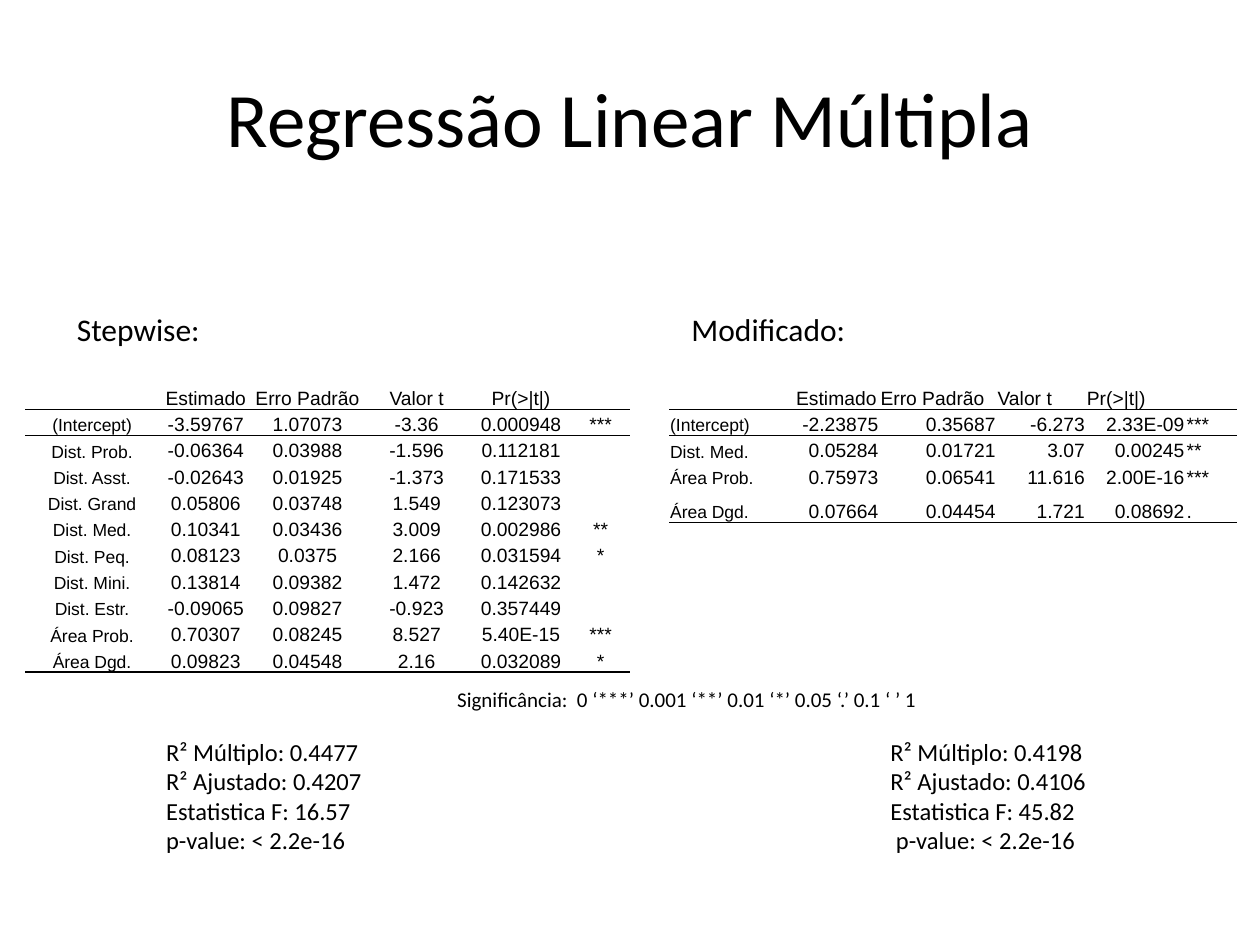
from dataclasses import dataclass

from lxml import etree
from pptx import Presentation
from pptx.dml.color import RGBColor
from pptx.enum.text import MSO_ANCHOR, MSO_AUTO_SIZE, PP_ALIGN
from pptx.oxml.ns import qn
from pptx.util import Cm, Pt

LEFT, CENTER, RIGHT = PP_ALIGN.LEFT, PP_ALIGN.CENTER, PP_ALIGN.RIGHT
TOP, MIDDLE, BOTTOM = MSO_ANCHOR.TOP, MSO_ANCHOR.MIDDLE, MSO_ANCHOR.BOTTOM
GROW = MSO_AUTO_SIZE.SHAPE_TO_FIT_TEXT
PLAIN_STYLE = "{2D5ABB26-0587-4C30-8999-92F81FD0307C}"


@dataclass(frozen=True)
class Theme:
    """Fonts, colours and type sizes of the slide."""
    text_font: str = "Calibri"
    table_font: str = "Arial"
    ink: str = "000000"
    title: int = 44
    heading: int = 18
    summary: int = 14
    legend: int = 12
    figure: int = 11
    label: int = 10
    rule: int = 1


THEME = Theme()
HEADER = ("", "Estimado", "Erro Padrão", "Valor t", "Pr(>|t|)", "")
STEPWISE = (
    HEADER,
    ("(Intercept)", "-3.59767", "1.07073", "-3.36", "0.000948", "***"),
    ("Dist. Prob.", "-0.06364", "0.03988", "-1.596", "0.112181", ""),
    ("Dist. Asst.", "-0.02643", "0.01925", "-1.373", "0.171533", ""),
    ("Dist. Grand", "0.05806", "0.03748", "1.549", "0.123073", ""),
    ("Dist. Med.", "0.10341", "0.03436", "3.009", "0.002986", "**"),
    ("Dist. Peq.", "0.08123", "0.0375", "2.166", "0.031594", "*"),
    ("Dist. Mini.", "0.13814", "0.09382", "1.472", "0.142632", ""),
    ("Dist. Estr.", "-0.09065", "0.09827", "-0.923", "0.357449", ""),
    ("Área Prob.", "0.70307", "0.08245", "8.527", "5.40E-15", "***"),
    ("Área Dgd.", "0.09823", "0.04548", "2.16", "0.032089", "*"),
)
MODIFIED = (
    HEADER,
    ("(Intercept)", "-2.23875", "0.35687", "-6.273", "2.33E-09", "***"),
    ("Dist. Med.", "0.05284", "0.01721", "3.07", "0.00245", "**"),
    ("Área Prob.", "0.75973", "0.06541", "11.616", "2.00E-16", "***"),
    ("Área Dgd.", "0.07664", "0.04454", "1.721", "0.08692", "."),
)
STEPWISE_SUMMARY = ("R² Múltiplo: 0.4477", "R² Ajustado: 0.4207",
                    "Estatistica F: 16.57", "p-value: < 2.2e-16")
MODIFIED_SUMMARY = ("R² Múltiplo: 0.4198", "R² Ajustado: 0.4106",
                    "Estatistica F: 45.82", " p-value: < 2.2e-16")
LEGEND = "Significância:  0 ‘***’ 0.001 ‘**’ 0.01 ‘*’ 0.05 ‘.’ 0.1 ‘ ’ 1 "


def style_paragraph(para, font, size, align):
    """Set the type and alignment of one paragraph."""
    para.alignment = align
    para.font.name = font
    para.font.size = Pt(size)
    para.font.color.rgb = RGBColor.from_string(THEME.ink)


def add_text(page, place, lines, size, align=LEFT, anchor=TOP):
    """Add a text box with one paragraph per line."""
    box = page.shapes.add_textbox(*(Cm(length) for length in place))
    frame = box.text_frame
    frame.word_wrap = True
    frame.vertical_anchor = anchor
    if anchor == TOP:
        frame.auto_size = GROW
    frame.text = "\n".join(lines)
    for para in frame.paragraphs:
        style_paragraph(para, THEME.text_font, size, align)


def add_rule(cell, side):
    """Draw a rule on one side of a cell, before its fill."""
    properties = cell._tc.get_or_add_tcPr()
    line = etree.Element(qn(f"a:{side}"), w=str(Pt(THEME.rule)))
    fill = etree.SubElement(line, qn("a:solidFill"))
    etree.SubElement(fill, qn("a:srgbClr"), val=THEME.ink)
    properties.insert(0, line)


def fill_cell(cell, text, size, align):
    """Write one table cell with tight margins and no fill."""
    cell.margin_left = cell.margin_right = cell.margin_top = Cm(0.02)
    cell.margin_bottom = Cm(0)
    cell.vertical_anchor = BOTTOM
    cell.fill.background()
    cell.text = text
    style_paragraph(cell.text_frame.paragraphs[0], THEME.table_font, size, align)


def add_coefficients(page, left, widths, heights, rows, edge_align, value_align):
    """Add a coefficient table ruled below its header and last row."""
    frame = page.shapes.add_table(
        len(rows), len(widths), Cm(left), Cm(7.72), Cm(sum(widths)), Cm(sum(heights)))
    table = frame.table
    table.horz_banding = table.first_row = False
    table._tbl.tblPr.find(qn("a:tableStyleId")).text = PLAIN_STYLE
    for column, width in zip(table.columns, widths):
        column.width = Cm(width)
    for row, height in zip(table.rows, heights):
        row.height = Cm(height)
    last_row, last_column = len(rows) - 1, len(widths) - 1
    for r, values in enumerate(rows):
        for c, text in enumerate(values):
            cell = table.cell(r, c)
            size = THEME.label if c == 0 else THEME.figure
            on_edge = r == 0 or c in (0, last_column)
            fill_cell(cell, text, size, edge_align if on_edge else value_align)
            if r in (0, last_row):
                add_rule(cell, "lnB")
            if r == 1:
                add_rule(cell, "lnT")


def main():
    """Build and save the regression slide."""
    deck = Presentation()
    deck.slide_width, deck.slide_height = Cm(25.4), Cm(19.05)
    page = deck.slides.add_slide(deck.slide_layouts[6])

    add_text(page, (1.27, 0.76, 22.86, 3.18), ["Regressão Linear Múltipla"],
             THEME.title, CENTER, MIDDLE)
    add_coefficients(page, 0.51, (2.69, 1.9, 2.2, 2.2, 2.01, 1.2),
                     [0.53] * len(STEPWISE), STEPWISE, CENTER, CENTER)
    add_text(page, (1.3, 6.12, 3.6, 1.02), ["Stepwise:"], THEME.heading)
    add_text(page, (3.1, 14.73, 4.8, 2.64), STEPWISE_SUMMARY, THEME.summary)
    add_coefficients(page, 13.49, (2.54, 1.7, 2.36, 1.8, 2.01, 1.04),
                     [0.53] * 4 + [0.69], MODIFIED, LEFT, RIGHT)
    add_text(page, (17.7, 14.73, 4.8, 2.64), MODIFIED_SUMMARY, THEME.summary)
    add_text(page, (6.3, 13.72, 15.19, 0.76), [LEGEND], THEME.legend, CENTER)
    add_text(page, (13.69, 6.12, 3.99, 1.02), ["Modificado:"], THEME.heading)

    deck.save("out.pptx")


if __name__ == "__main__":
    main()
